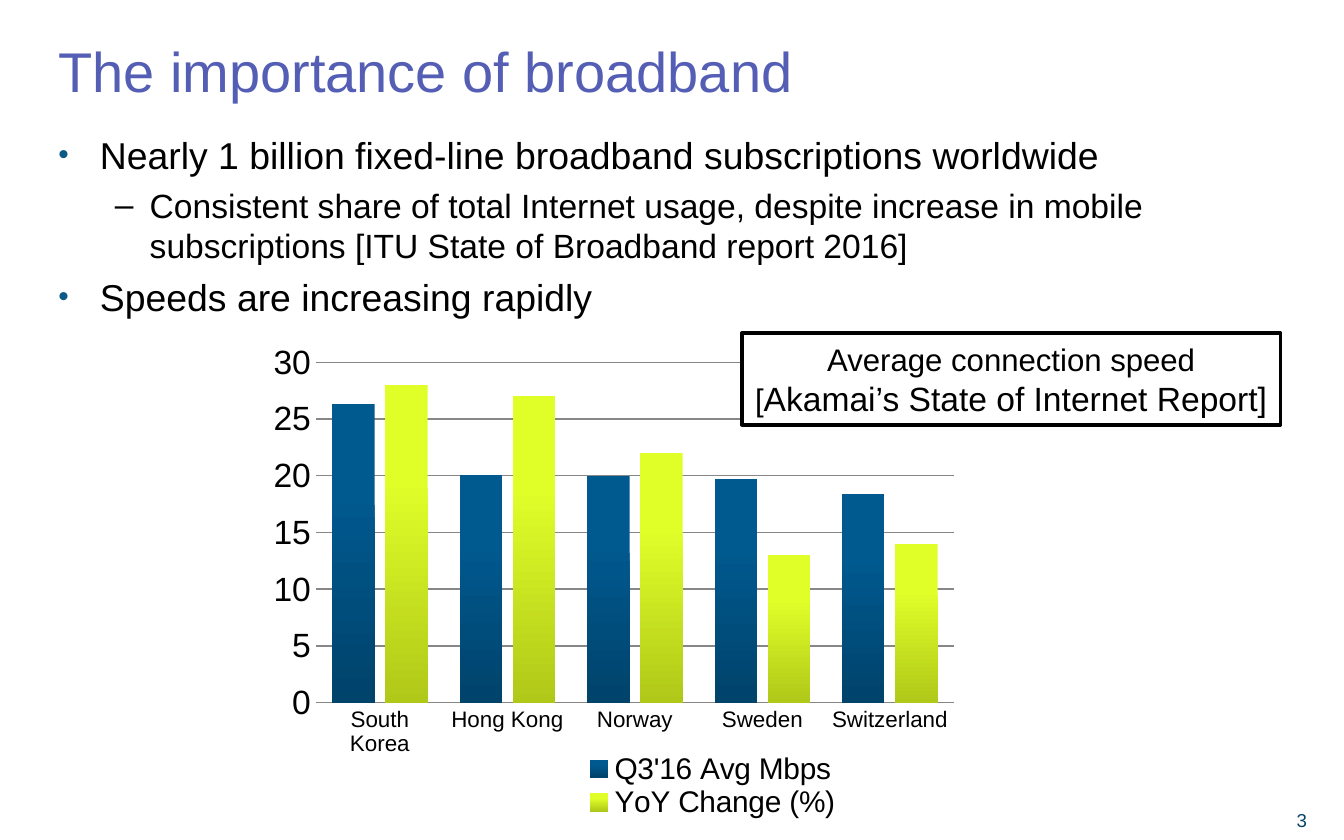
from lxml import etree
from pptx import Presentation
from pptx.chart.data import CategoryChartData as ChartData
from pptx.dml.color import RGBColor
from pptx.enum.chart import XL_CHART_TYPE as ChartType, XL_LEGEND_POSITION as LegendPos
from pptx.enum.chart import XL_TICK_MARK as TickMark
from pptx.enum.shapes import MSO_SHAPE as Shape
from pptx.enum.text import MSO_ANCHOR as Anchor, MSO_AUTO_SIZE as AutoSize, PP_ALIGN as Align
from pptx.oxml import parse_xml
from pptx.oxml.ns import nsdecls, qn
from pptx.util import Pt


def color(value):
    return RGBColor.from_string(value)


def style(font, size, value="000000"):
    for name, setting in {"name": "Arial", "size": Pt(size), "bold": False}.items():
        setattr(font, name, setting)
    font.color.rgb = color(value)


deck = Presentation()
deck.slide_width, deck.slide_height = Pt(720), Pt(450)
page = deck.slides.add_slide(deck.slide_layouts[1])
title, body = page.shapes.title, page.placeholders[1]

# Title and body frames
for box, top, height, anchor in ((title, 20, 35.5, Anchor.MIDDLE), (body, 67, 348, Anchor.TOP)):
    frame = {"left": Pt(24), "top": Pt(top), "width": Pt(672), "height": Pt(height)}
    for name, setting in frame.items():
        setattr(box, name, setting)
    box.text_frame.vertical_anchor = anchor
    box.text_frame.auto_size = AutoSize.NONE
    box.text_frame.word_wrap = True

title.text_frame.text = "The importance of broadband"
title.text_frame.paragraphs[0].alignment = Align.LEFT
style(title.text_frame.paragraphs[0].font, 30, "545EB4")

# Bulleted list
levels = [
    {"size": 20, "margin": 22.3, "hang": 22.3, "bullet": "•",
     "look": '<a:buClr {0}><a:srgbClr val="0C5986"/></a:buClr>|<a:buSzPct {0} val="80000"/>'},
    {"size": 18, "margin": 49, "hang": 18.7, "bullet": "–", "look": ""},
]
points = [
    (0, 0, "Nearly 1 billion fixed-line broadband subscriptions worldwide"),
    (1, 4.3, "Consistent share of total Internet usage, despite increase in mobile "
             "subscriptions [ITU State of Broadband report 2016]"),
    (0, 4.8, "Speeds are increasing rapidly"),
]
for index, (level, space, text) in enumerate(points):
    para = body.text_frame.paragraphs[0] if index == 0 else body.text_frame.add_paragraph()
    form = levels[level]
    para.text, para.level = text, level
    para.alignment, para.space_before = Align.LEFT, Pt(space)
    props = para._p.get_or_add_pPr()
    props.set("marL", str(Pt(form["margin"])))
    props.set("indent", str(-Pt(form["hang"])))
    for part in filter(None, form["look"].split("|")):
        props.append(parse_xml(part.format(nsdecls("a"))))
    etree.SubElement(props, qn("a:buChar")).set("char", form["bullet"])
    style(para.font, form["size"])

# Column chart
data = ChartData()
data.categories = ["South Korea", "Hong Kong", "Norway", "Sweden", "Switzerland"]
data.add_series("Q3'16 Avg Mbps", (26.3, 20.1, 20, 19.7, 18.4))
data.add_series("YoY Change (%)", (28, 27, 22, 13, 14))
chart = page.shapes.add_chart(ChartType.COLUMN_CLUSTERED, Pt(139), Pt(178.5),
                              Pt(379.5), Pt(260.5), data).chart
chart.has_title = False
style(chart.font, 18)
plot = chart.plots[0]
plot.gap_width, plot.overlap, plot.vary_by_categories = 75, -25, False

for series, shades in zip(plot.series, (("00598F", "00436B"), ("E0FF29", "B0C818"))):
    fill = series.format.fill
    fill.gradient()
    fill.gradient_angle = 270
    for stop, shade, position in zip(fill.gradient_stops, shades, (0.3, 1)):
        stop.color.rgb, stop.position = color(shade), position

# Axes and gridlines
values, categories = chart.value_axis, chart.category_axis
values.minimum_scale, values.maximum_scale, values.major_unit = 0, 30, 5
values.has_major_gridlines = True
for axis, size in ((values, 18), (categories, 12)):
    axis.major_tick_mark = axis.minor_tick_mark = TickMark.NONE
    style(axis.tick_labels.font, size)
values.format.line.fill.background()
for line in (values.major_gridlines.format.line, categories.format.line):
    line.color.rgb, line.width = color("878787"), Pt(0.75)

# Legend, then fixed places for plot and legend
chart.has_legend = True
legend = chart.legend
legend.position, legend.include_in_layout = LegendPos.BOTTOM, False
style(legend.font, 16)
chart_root = chart._chartSpace.chart
for holder, index, inner, place in (
    (chart_root.plotArea, 0, True, (0.08, 0.06, 0.9, 0.7)),
    (legend._element, 1, False, (0.46, 0.86, 0.36, 0.14)),
):
    for old in holder.findall(qn("c:layout")):
        holder.remove(old)
    layout = parse_xml(f"<c:layout {nsdecls('c')}><c:manualLayout/></c:layout>")
    entries = [("layoutTarget", "inner")] if inner else []
    entries += [("xMode", "edge"), ("yMode", "edge"), *zip("xywh", place)]
    for tag, value in entries:
        etree.SubElement(layout[0], qn(f"c:{tag}")).set("val", str(value))
    holder.insert(index, layout)

# Source box over the chart
box = page.shapes.add_shape(Shape.RECTANGLE, Pt(397.5), Pt(178.5), Pt(288.5), Pt(49))
box.shadow.inherit = False
box.fill.solid()
box.fill.fore_color.rgb = color("FFFFFF")
box.line.color.rgb, box.line.width = color("000000"), Pt(2)
frame = box.text_frame
frame.word_wrap, frame.vertical_anchor = False, Anchor.MIDDLE
lines = [
    [("Average connection speed", 16.7)],
    [("[", 16.7), ("Akamai’s State of Internet Report]", 18)],
]
for index, spans in enumerate(lines):
    para = frame.paragraphs[0] if index == 0 else frame.add_paragraph()
    para.alignment = Align.CENTER
    for text, size in spans:
        span = para.add_run()
        span.text = text
        style(span.font, size)

# Page number
box = page.shapes.add_textbox(Pt(687.5), Pt(430), Pt(32.5), Pt(20))
box.text_frame.word_wrap = True
box.text_frame.text = "3"
style(box.text_frame.paragraphs[0].font, 10, "094365")

deck.save("out.pptx")
